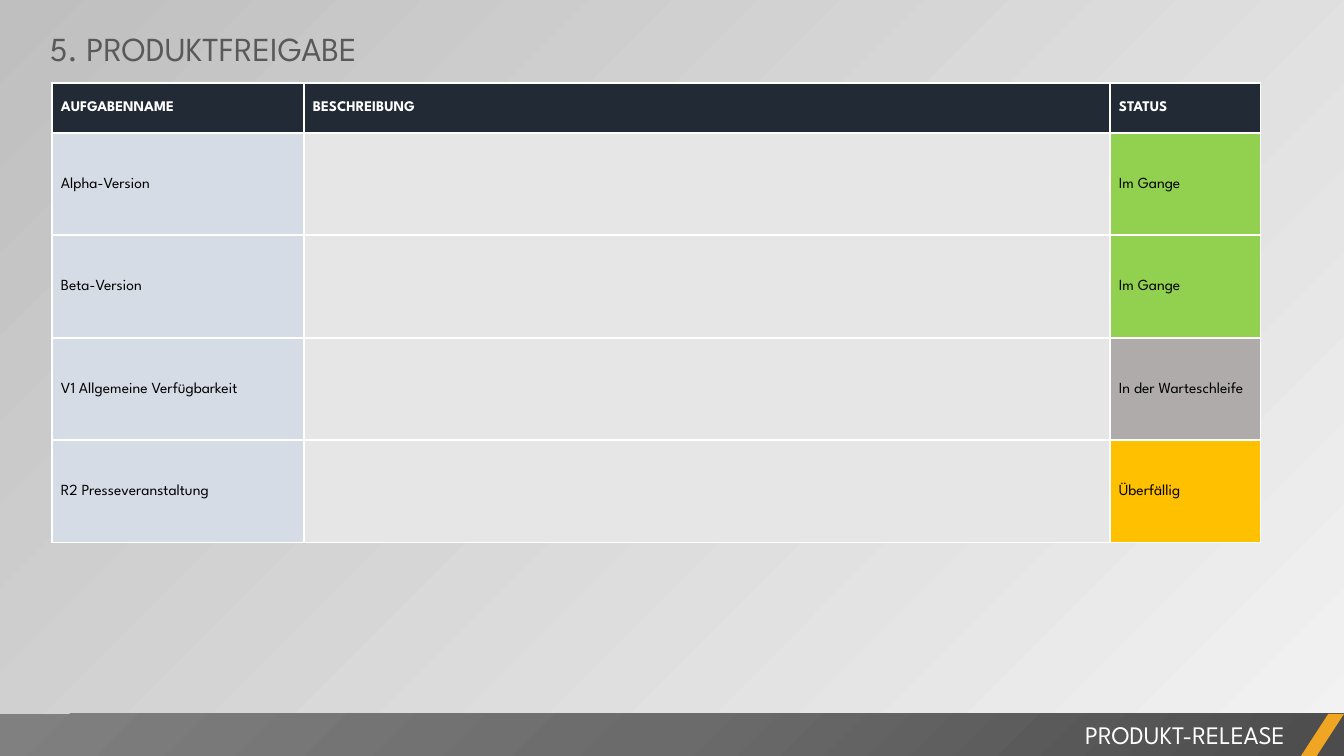
from dataclasses import dataclass

from lxml import etree
from pptx import Presentation
from pptx.dml.color import RGBColor
from pptx.enum.shapes import MSO_SHAPE
from pptx.enum.text import MSO_ANCHOR, MSO_AUTO_SIZE, PP_ALIGN
from pptx.oxml.ns import qn
from pptx.util import Emu, Pt

MIDDLE = MSO_ANCHOR.MIDDLE
LEFT, RIGHT = PP_ALIGN.LEFT, PP_ALIGN.RIGHT
FIT_SHAPE = MSO_AUTO_SIZE.SHAPE_TO_FIT_TEXT
PARALLELOGRAM = MSO_SHAPE.PARALLELOGRAM

# Content
TITLE = "5. PRODUKTFREIGABE"
FOOTER = "PRODUKT-RELEASE"
HEADER = ("AUFGABENNAME", "BESCHREIBUNG", "STATUS")
TASKS = [
    ("Alpha-Version", "", "Im Gange"),
    ("Beta-Version", "", "Im Gange"),
    ("V1 Allgemeine Verfügbarkeit", "", "In der Warteschleife"),
    ("R2 Presseveranstaltung", "", "Überfällig"),
]

# Layout in px
SLIDE_W, SLIDE_H = 1344, 756
TABLE_X, TABLE_Y = 52, 83
COLUMNS = (252, 806, 151)
ROWS = (50, 102, 103, 102, 103)
BAR_Y, BAR_H, ACCENT_W = 714, 42, 43


@dataclass(frozen=True)
class Theme:
    font: str = "League Spartan"
    title: str = "595959"
    white: str = "FFFFFF"
    text: str = "000000"
    header: str = "222A35"
    task: str = "D6DCE5"
    description: str = "E7E6E6"
    accent: str = "F0A622"
    background: tuple = ((0, "F2F2F2", 40), (100, "BFBFBF", 100))
    bar: tuple = ((0, "4C4C4C", 100), (50, "6B6B6B", 100), (100, "808080", 100))
    title_size: float = 24
    footer_size: float = 18
    header_size: float = 10.5
    body_size: float = 11


THEME = Theme()
STATUS_FILLS = {
    "Im Gange": "92D050",
    "In der Warteschleife": "AFABAB",
    "Überfällig": "FFC000",
}


def px(value):
    return Emu(round(value * 914400 / 100.8))


def solid(fill, color):
    fill.solid()
    fill.fore_color.rgb = RGBColor.from_string(color)


def sub(parent, tag, **attrs):
    return etree.SubElement(parent, qn(tag), {k: str(v) for k, v in attrs.items()})


def gradient(fill, element, stops, angle=None):
    """Linear at the given angle, otherwise circular from the lower right corner."""
    fill.gradient()
    grad = next(element.iter(qn("a:gradFill")))
    for child in list(grad):
        grad.remove(child)
    stop_list = sub(grad, "a:gsLst")
    for position, color, opacity in stops:
        stop = sub(stop_list, "a:gs", pos=position * 1000)
        rgb = sub(stop, "a:srgbClr", val=color)
        if opacity < 100:
            sub(rgb, "a:alpha", val=opacity * 1000)
    if angle is not None:
        sub(grad, "a:lin", ang=angle * 60000, scaled=0)
    else:
        path = sub(grad, "a:path", path="circle")
        sub(path, "a:fillToRect", l=100000, t=100000)


def write(tf, text, size, color, bold=False, align=LEFT):
    p = tf.paragraphs[0]
    p.text = text
    p.alignment = align
    for r in p.runs:
        r.font.name = THEME.font
        r.font.size = Pt(size)
        r.font.bold = bold
        r.font.color.rgb = RGBColor.from_string(color)


def add_label(s, box, text, size, color, wrap, align=LEFT):
    tf = s.shapes.add_textbox(*map(px, box)).text_frame
    tf.word_wrap = wrap
    tf.auto_size = FIT_SHAPE
    write(tf, text, size, color, align=align)


def add_borders(cell):
    tc_pr = cell._tc.get_or_add_tcPr()
    for index, side in enumerate(("a:lnL", "a:lnR", "a:lnT", "a:lnB")):
        line = etree.Element(qn(side), {"w": str(Pt(1))})
        sub(sub(line, "a:solidFill"), "a:srgbClr", val=THEME.white)
        tc_pr.insert(index, line)


def add_footer(s):
    # Dark bar across the slide
    builder = s.shapes.build_freeform(0, px(BAR_Y))
    corners = [(SLIDE_W, BAR_Y), (SLIDE_W, BAR_Y + BAR_H), (0, BAR_Y + BAR_H)]
    builder.add_line_segments([(px(x), px(y)) for x, y in corners], close=True)
    bar = builder.convert_to_shape()
    gradient(bar.fill, bar._element.spPr, THEME.bar)

    # Slanted accent at the right end
    accent = s.shapes.add_shape(
        PARALLELOGRAM, px(SLIDE_W - ACCENT_W), px(BAR_Y), px(ACCENT_W), px(BAR_H))
    accent.adjustments[0] = 0.65
    solid(accent.fill, THEME.accent)

    for sp in (bar, accent):
        sp.line.fill.background()
        sp.shadow.inherit = False
    add_label(s, (529, 714, 766, 40), FOOTER, THEME.footer_size, THEME.white, True, RIGHT)


def add_task_table(s):
    frame = s.shapes.add_table(
        len(ROWS), len(COLUMNS), px(TABLE_X), px(TABLE_Y), px(sum(COLUMNS)), px(sum(ROWS)))
    table = frame.table
    table.horz_banding = False
    for column, width in zip(table.columns, COLUMNS):
        column.width = px(width)
    for row, height in zip(table.rows, ROWS):
        row.height = px(height)

    for i, texts in enumerate([HEADER] + TASKS):
        is_header = i == 0
        if is_header:
            fills = [THEME.header] * len(COLUMNS)
            style = (THEME.header_size, THEME.white, True)
        else:
            fills = [THEME.task, THEME.description, STATUS_FILLS[texts[-1]]]
            style = (THEME.body_size, THEME.text, False)
        for j, (text, color) in enumerate(zip(texts, fills)):
            cell = table.cell(i, j)
            solid(cell.fill, color)
            add_borders(cell)
            if text:
                cell.vertical_anchor = MIDDLE
                cell.margin_left = px(9)
                cell.margin_right = cell.margin_top = px(1)
                cell.margin_bottom = 0
                write(cell.text_frame, text, *style)


def main():
    prs = Presentation()
    prs.slide_width, prs.slide_height = px(SLIDE_W), px(SLIDE_H)
    s = prs.slides.add_slide(prs.slide_layouts[6])
    gradient(s.background.fill, s._element, THEME.background, angle=225)
    add_footer(s)
    add_label(s, (40, 23, 360, 50), TITLE, THEME.title_size, THEME.title, False)
    add_task_table(s)
    prs.save("out.pptx")


if __name__ == "__main__":
    main()
